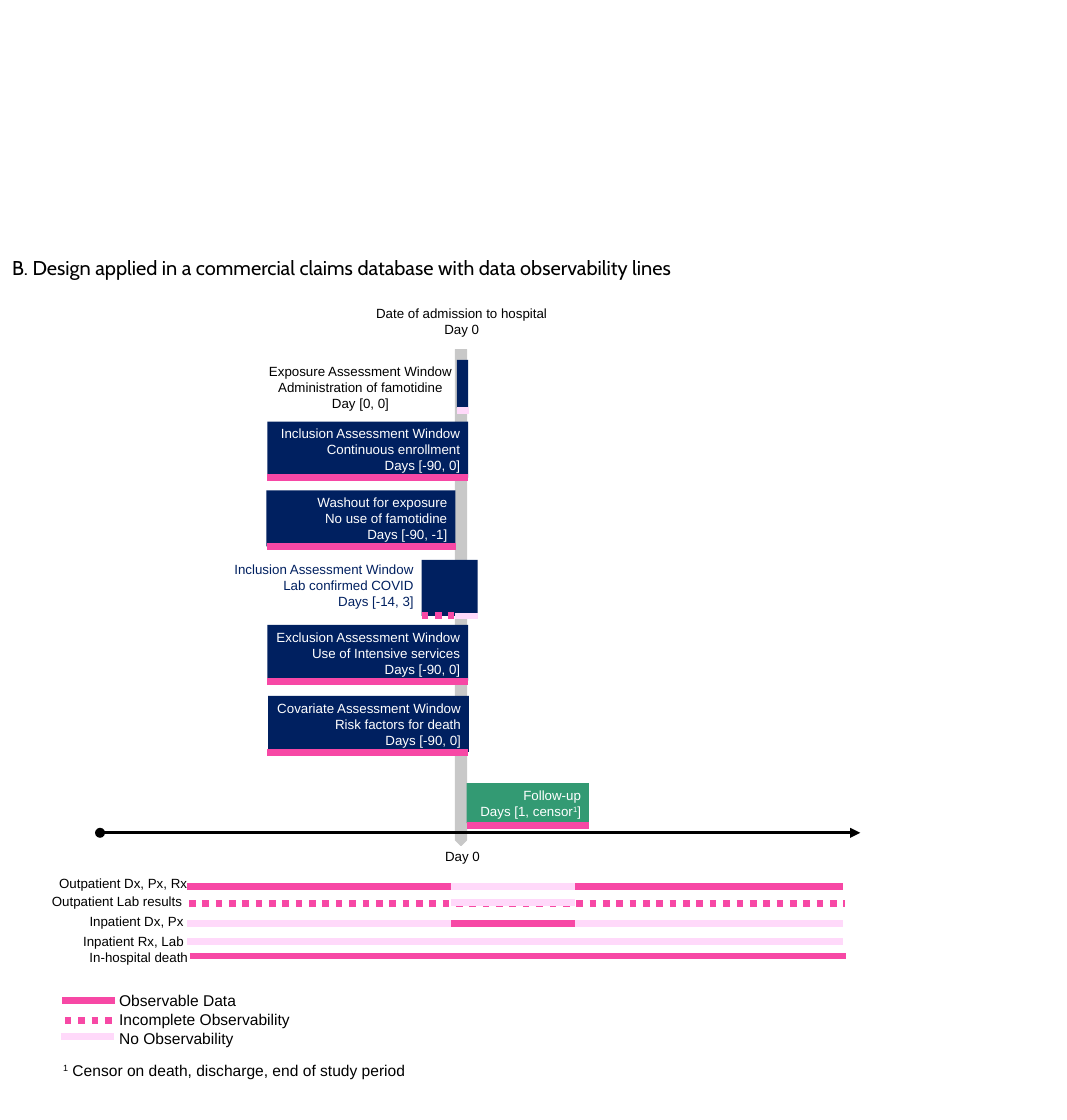
from lxml import etree
from pptx import Presentation
from pptx.dml.color import RGBColor
from pptx.enum.dml import MSO_LINE
from pptx.enum.shapes import MSO_CONNECTOR, MSO_SHAPE
from pptx.enum.text import MSO_ANCHOR, MSO_AUTO_SIZE, PP_ALIGN
from pptx.oxml.ns import qn
from pptx.util import Inches, Pt

NAVY = RGBColor(0x00, 0x20, 0x60)
GREEN = RGBColor(0x33, 0x9A, 0x73)
GREY = RGBColor(0xC8, 0xC8, 0xC8)
PINK = RGBColor(0xF7, 0x48, 0xA5)
PALE = RGBColor(0xFF, 0xD9, 0xFA)
BLACK = RGBColor(0x00, 0x00, 0x00)
WHITE = RGBColor(0xFF, 0xFF, 0xFF)

RECTANGLE = MSO_SHAPE.RECTANGLE
PENTAGON = MSO_SHAPE.PENTAGON
STRAIGHT = MSO_CONNECTOR.STRAIGHT
DOTTED = MSO_LINE.ROUND_DOT
LEFT, CENTER, RIGHT = PP_ALIGN.LEFT, PP_ALIGN.CENTER, PP_ALIGN.RIGHT
TOP, MIDDLE, BOTTOM = MSO_ANCHOR.TOP, MSO_ANCHOR.MIDDLE, MSO_ANCHOR.BOTTOM
GROW = MSO_AUTO_SIZE.SHAPE_TO_FIT_TEXT


def write(frame, text, size=12, color=BLACK, align=LEFT, anchor=TOP, font="Arial", wrap=True):
    frame.word_wrap = wrap
    frame.auto_size = GROW
    frame.vertical_anchor = anchor
    for index, words in enumerate(text.split("\n")):
        para = frame.paragraphs[0] if index == 0 else frame.add_paragraph()
        para.alignment = align
        for part, piece in enumerate(words.split("^")):
            if not piece:
                continue
            span = para.add_run()
            span.text = piece
            span.font.size = Pt(size)
            span.font.name = font
            span.font.color.rgb = color
            if part % 2:
                span.font._element.set("baseline", "30000")


class Diagram:
    def __init__(self, page, bar_width=6):
        self.page = page
        self.bar_width = bar_width

    def title(self, left, top, width, height, text):
        box = self.page.shapes.title
        box.left, box.top, box.width, box.height = map(Inches, (left, top, width, height))
        write(box.text_frame, text, size=18, font="Cabin", anchor=BOTTOM)

    def label(self, left, top, width, height, text, **style):
        box = self.page.shapes.add_textbox(*map(Inches, (left, top, width, height)))
        write(box.text_frame, text, **style)

    def block(self, left, top, width, height, fill=NAVY, text="", kind=RECTANGLE, anchor=TOP):
        box = self.page.shapes.add_shape(kind, *map(Inches, (left, top, width, height)))
        box.shadow.inherit = False
        box.fill.solid()
        box.fill.fore_color.rgb = fill
        box.line.fill.background()
        if text:
            write(box.text_frame, text, color=WHITE, align=RIGHT, anchor=anchor)
        return box

    def bar(self, start, end, height, color=PINK, dash=None, width=None, ends=()):
        line = self.page.shapes.add_connector(
            STRAIGHT, Inches(start), Inches(height), Inches(end), Inches(height))
        line.line.color.rgb = color
        line.line.width = Pt(width or self.bar_width)
        if dash:
            line.line.dash_style = dash
        outline = line.line._get_or_add_ln()
        for tag, kind in zip(("a:headEnd", "a:tailEnd"), ends):
            etree.SubElement(outline, qn(tag), type=kind)
        etree.SubElement(line._element.spPr, qn("a:effectLst"))


def draw_windows(diagram):
    diagram.label(4.59, 3.77, 2.36, 0.5, "Date of admission to hospital\nDay 0",
                  align=CENTER, wrap=False)
    diagram.label(3.16, 4.49, 2.69, 0.71,
                  "Exposure Assessment Window\nAdministration of famotidine\nDay [0, 0]",
                  align=CENTER)
    diagram.block(5.71, 4.5, 0.14, 0.6)
    diagram.bar(5.71, 5.86, 5.13, PALE)

    windows = [
        (3.34, 5.27, 2.51, 5.97,
         "Inclusion Assessment Window\nContinuous enrollment\nDays [-90, 0]"),
        (3.33, 6.13, 2.36, 6.83,
         "Washout for exposure\nNo use of famotidine\nDays [-90, -1]"),
        (3.34, 7.81, 2.51, 8.52,
         "Exclusion Assessment Window\nUse of Intensive services\nDays [-90, 0]"),
        (3.35, 8.7, 2.51, 9.41,
         "Covariate Assessment Window\nRisk factors for death\nDays [-90, 0]"),
    ]
    for left, top, width, height, text in windows:
        diagram.block(left, top, width, 0.7, text=text)
        diagram.bar(3.34, 3.34 + width, height)

    diagram.block(5.27, 7, 0.7, 0.7)
    diagram.label(2.81, 6.96, 2.46, 0.91,
                  "Inclusion Assessment Window\nLab confirmed COVID\n Days [-14, 3]",
                  color=NAVY, align=RIGHT, wrap=False)
    diagram.bar(5.27, 5.67, 7.69, dash=DOTTED)
    diagram.bar(5.69, 5.97, 7.7, PALE)

    diagram.block(5.83, 9.79, 1.53, 0.5, GREEN, "Follow-up\nDays [1, censor^1^]", anchor=MIDDLE)
    diagram.bar(5.83, 7.36, 10.32)


def draw_observability(diagram):
    sources = [
        ("Outpatient Dx, Px, Rx", 0.64, 10.89, 1.82, 2.34, 11.08, PINK, None, PALE),
        ("Outpatient Lab results", 0.55, 11.11, 1.84, 2.36, 11.29, PINK, DOTTED, PALE),
        ("Inpatient Dx, Px", 1.02, 11.36, 1.39, 2.34, 11.54, PALE, None, PINK),
        ("Inpatient Rx, Lab", 0.94, 11.62, 1.47, 2.34, 11.77, PALE, None, None),
        ("In-hospital death", 1.02, 11.82, 1.44, 2.37, 11.95, PINK, None, None),
    ]
    for text, left, top, width, start, height, color, dash, stay in sources:
        diagram.label(left, top, width, 0.3, text, wrap=False)
        diagram.bar(start, start + 8.2, height, color, dash)
        if stay:
            diagram.bar(5.64, 7.19, height - 0.01 if dash else height, stay)


def draw_legend(diagram):
    entries = [
        ("Observable Data", 12.34, 1.67, 0.78, 12.51, PINK, None),
        ("Incomplete Observability", 12.57, 2.35, 0.81, 12.76, PINK, DOTTED),
        ("No Observability", 12.81, 1.64, 0.76, 12.96, PALE, None),
    ]
    for text, top, width, start, height, color, dash in entries:
        diagram.label(1.39, top, width, 0.34, text, size=14, wrap=False)
        diagram.bar(start, start + 0.66, height, color, dash)
    diagram.label(0.69, 13.21, 4.51, 0.34, "^1^ Censor on death, discharge, end of study period",
                  size=14, wrap=False)


def main():
    deck = Presentation()
    deck.slide_width, deck.slide_height = Inches(40 / 3), Inches(14)
    diagram = Diagram(deck.slides.add_slide(deck.slide_layouts[5]))

    diagram.title(0.05, 3.15, 11.91, 0.4,
                  "B. Design applied in a commercial claims database with data observability lines")
    day_zero = diagram.block(2.66, 7.4, 6.2, 0.14, GREY, kind=PENTAGON)
    day_zero.rotation = 90
    day_zero.line.color.rgb = GREY
    day_zero.line.width = Pt(1)
    diagram.bar(1.25, 10.75, 10.41, BLACK, width=3, ends=("oval", "triangle"))
    diagram.label(2.45, 10.55, 6.66, 0.3, "Day 0", align=CENTER)

    draw_windows(diagram)
    draw_observability(diagram)
    draw_legend(diagram)
    deck.save("out.pptx")


if __name__ == "__main__":
    main()
